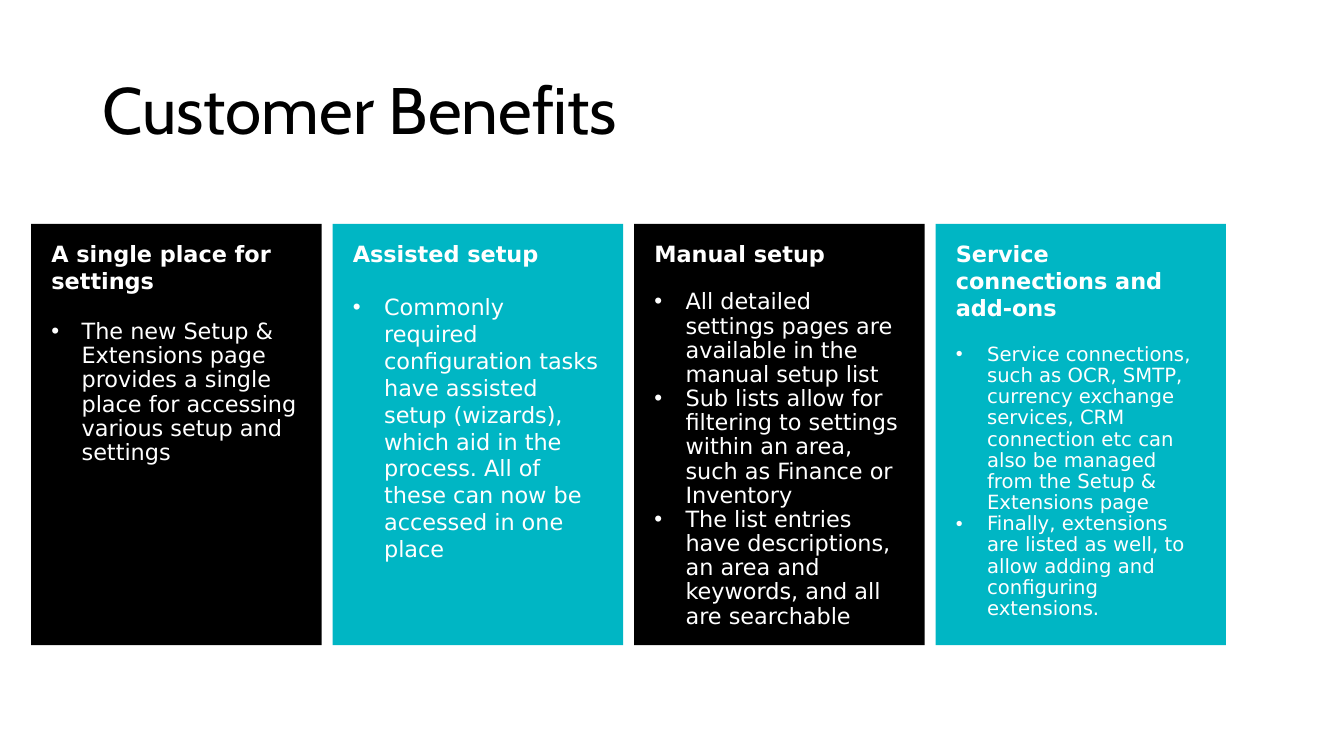
from lxml import etree
from pptx import Presentation
from pptx.dml.color import RGBColor
from pptx.enum.shapes import MSO_SHAPE
from pptx.enum.text import MSO_ANCHOR, PP_ALIGN
from pptx.oxml.ns import qn
from pptx.util import Inches, Pt

RECTANGLE = MSO_SHAPE.RECTANGLE
TOP, MIDDLE = MSO_ANCHOR.TOP, MSO_ANCHOR.MIDDLE
LEFT = PP_ALIGN.LEFT

COLORS = {"black": "000000", "teal": "00B6C4", "white": "FFFFFF"}
TITLE_FONT, BODY_FONT = "Cabin", "DejaVu Sans"

# Card row: left, top, width, height and column pitch in inches
CARD_LEFT, CARD_TOP, CARD_WIDTH, CARD_HEIGHT = 0.31, 2.22, 2.88, 4.18
CARD_PITCH = 2.99

# Gap is the space in points between a card's heading and its bullets
CARDS = [
    {"heading": "A single place for settings", "fill": "black",
     "size": 16, "spacing": 0.9, "gap": 19, "indent": 0.3,
     "bullets": ["The new Setup & Extensions page provides a single place for "
                 "accessing various setup and settings"]},
    {"heading": "Assisted setup", "fill": "teal",
     "size": 16, "spacing": 1.0, "gap": 19, "indent": 0.31,
     "bullets": ["Commonly required configuration tasks have assisted setup "
                 "(wizards), which aid in the process. All of these can now be "
                 "accessed in one place"]},
    {"heading": "Manual setup", "fill": "black",
     "size": 16, "spacing": 0.9, "gap": 17, "indent": 0.31,
     "bullets": ["All detailed settings pages are available in the manual setup list",
                 "Sub lists allow for filtering to settings within an area, such as "
                 "Finance or Inventory",
                 "The list entries have descriptions, an area and keywords, and all "
                 "are searchable"]},
    {"heading": "Service connections and add-ons", "fill": "teal",
     "size": 14, "spacing": 0.9, "gap": 17, "indent": 0.31,
     "bullets": ["Service connections, such as OCR, SMTP, currency exchange services, "
                 "CRM connection etc can also be managed from the Setup & "
                 "Extensions page",
                 "Finally, extensions are listed as well, to allow adding and "
                 "configuring extensions."]},
]


def set_format(target, values):
    for attribute, value in values.items():
        setattr(target, attribute, value)


def write(paragraph, text, font, size, color, bold=False, spacing=1.0):
    set_format(paragraph, {"alignment": LEFT, "line_spacing": spacing})
    run = paragraph.add_run()
    run.text = text
    set_format(run.font, {"name": font, "size": Pt(size), "bold": bold})
    run.font.color.rgb = RGBColor.from_string(COLORS[color])


def add_bullet(paragraph, indent):
    properties = paragraph._p.get_or_add_pPr()
    properties.set("marL", str(Inches(indent)))
    properties.set("indent", str(-Inches(indent)))
    etree.SubElement(properties, qn("a:buFont")).set("typeface", "Arial")
    etree.SubElement(properties, qn("a:buChar")).set("char", "•")


def add_title(slide, box, text):
    title = slide.shapes.add_textbox(*map(Inches, box)).text_frame
    set_format(title, {"word_wrap": True, "vertical_anchor": MIDDLE})
    write(title.paragraphs[0], text, TITLE_FONT, 46.9, "black", spacing=0.9)


def add_card(slide, box, content):
    card = slide.shapes.add_shape(RECTANGLE, *map(Inches, box))
    card.shadow.inherit = False
    card.fill.solid()
    card.fill.fore_color.rgb = RGBColor.from_string(COLORS[content["fill"]])
    card.line.fill.background()

    frame = card.text_frame
    set_format(frame, {
        "word_wrap": True, "vertical_anchor": TOP,
        "margin_left": Inches(0.2), "margin_right": Inches(0.2),
        "margin_top": Inches(0.16), "margin_bottom": Inches(0.16),
    })
    write(frame.paragraphs[0], content["heading"], BODY_FONT, 16, "white", bold=True)

    # Bullets, with the gap above the first one only
    for index, text in enumerate(content["bullets"]):
        bullet = frame.add_paragraph()
        add_bullet(bullet, content["indent"])
        write(bullet, text, BODY_FONT, content["size"], "white",
              spacing=content["spacing"])
        bullet.space_before = Pt(0 if index else content["gap"])


def main():
    presentation = Presentation()
    set_format(presentation, {"slide_width": Inches(13.33),
                              "slide_height": Inches(7.5)})
    slide = presentation.slides.add_slide(presentation.slide_layouts[6])

    # Title
    add_title(slide, (0.92, 0.4, 11.5, 1.45), "Customer Benefits")

    # Row of benefit cards
    for column, content in enumerate(CARDS):
        left = CARD_LEFT + column * CARD_PITCH
        add_card(slide, (left, CARD_TOP, CARD_WIDTH, CARD_HEIGHT), content)

    presentation.save("out.pptx")


if __name__ == "__main__":
    main()
